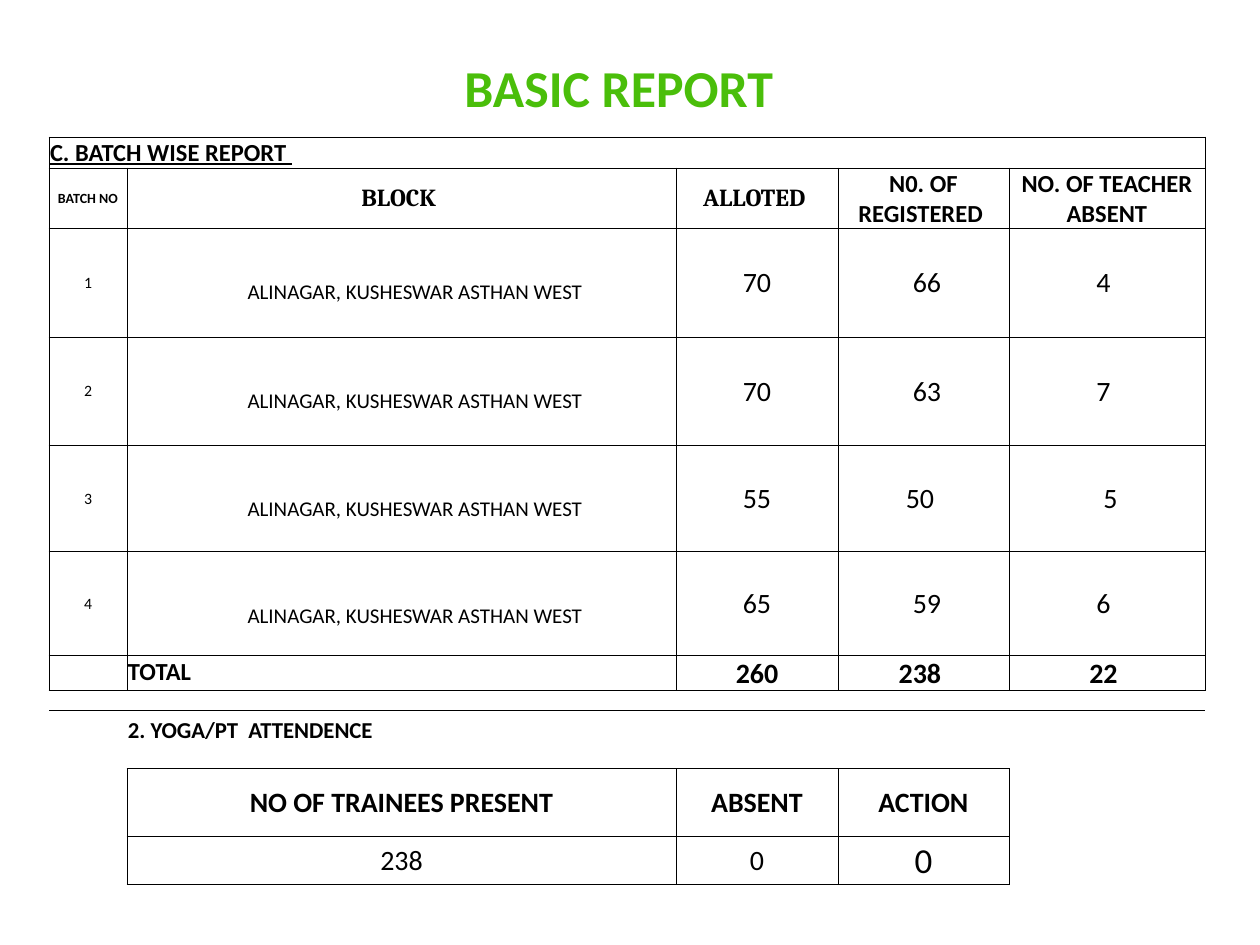
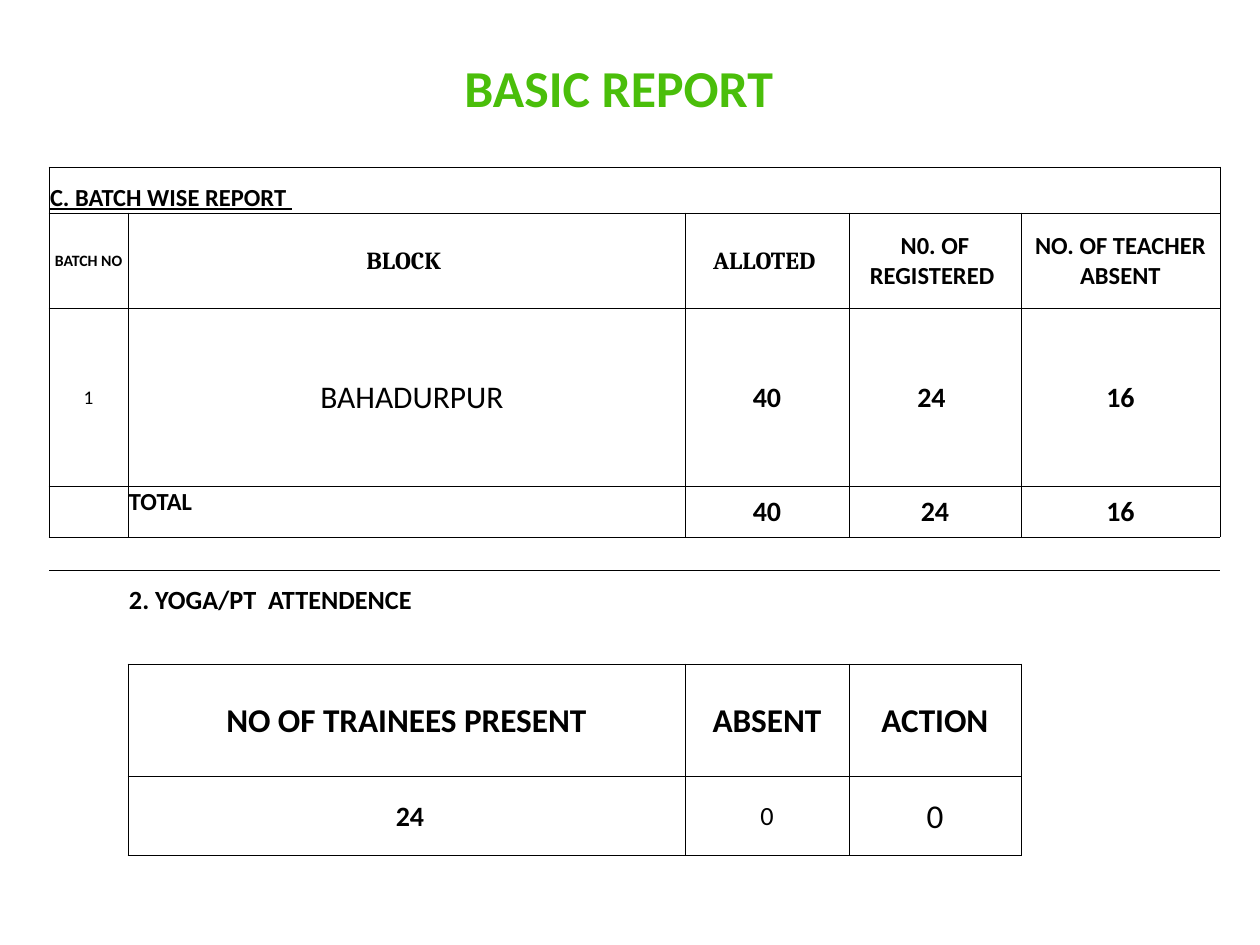
"""Build the two BASIC REPORT slides, each with a batch and attendance table."""
from dataclasses import dataclass
from typing import Optional

from lxml import etree
from pptx import Presentation
from pptx import util as u
from pptx.dml.color import RGBColor
from pptx.enum import text
from pptx.oxml.ns import qn

EMU_PER_PX = 914400 / 126
BLACK, WHITE, GREEN = "000000", "FFFFFF", "4ABE0A"
NO_STYLE = "{2D5ABB26-0587-4C30-8999-92F81FD0307C}"
LEFT = 49
SIDES = {"L": (0, -1), "R": (0, 1), "T": (-1, 0), "B": (1, 0)}
CENTER, START = text.PP_ALIGN.CENTER, text.PP_ALIGN.LEFT
TOP, MIDDLE, BOTTOM = (text.MSO_ANCHOR.TOP, text.MSO_ANCHOR.MIDDLE,
                       text.MSO_ANCHOR.BOTTOM)


@dataclass
class Cell:
    text: str
    size: int
    bold: bool = False
    font: str = "Calibri"
    underline: bool = False
    align: text.PP_ALIGN = CENTER
    anchor: text.MSO_ANCHOR = MIDDLE
    shift: int = 0
    drop: int = 0


Row = list[Optional[Cell]]


@dataclass
class Report:
    top: int
    cols: list[int]
    rows: list[int]
    batch_size: int
    batches: list[Row]
    totals: Row
    yoga_size: int
    present_size: int
    present: Row

    def grid(self) -> list[Row]:
        blank: Row = [None] * 5
        title = Cell("C. BATCH WISE REPORT ", 14, True, underline=True,
                     align=START, anchor=BOTTOM)
        heads = [Cell("BATCH NO", self.batch_size, True),
                 Cell("BLOCK ", 14, True, "Cambria"),
                 Cell("ALLOTED ", 14, True, "Cambria"),
                 Cell("N0. OF REGISTERED ", 14, True),
                 Cell("NO. OF TEACHER ABSENT", 14, True)]
        total = Cell("TOTAL", 14, True, align=START, anchor=TOP)
        yoga = Cell("2. YOGA/PT  ATTENDENCE", self.yoga_size, True, align=START)
        present_heads = [Cell(name, self.present_size, True)
                         for name in ("NO OF TRAINEES PRESENT", "ABSENT", "ACTION")]
        return [[title, *blank[1:]], heads, *self.batches,
                [None, total, *self.totals], blank,
                [None, yoga, None, None, None], blank,
                [None, *present_heads, None], [None, *self.present, None]]


def px(n: float) -> u.Emu:
    return u.Emu(round(n * EMU_PER_PX))


def rgb(value: str) -> RGBColor:
    return RGBColor.from_string(value)


def figures(values: str, bold: bool, shifts: tuple[int, ...]) -> Row:
    return [Cell(v, 16, bold, shift=s) for v, s in zip(values.split(), shifts)]


def joint_batch(number: int, values: str, shifts: tuple[int, ...]) -> Row:
    place = Cell("ALINAGAR, KUSHESWAR ASTHAN WEST", 12, anchor=TOP,
                 shift=27, drop=51)
    return [Cell(str(number), 9), place, *figures(values, False, shifts)]


def write(p, words: str, **fmt) -> None:
    color = fmt.pop("color", BLACK)
    r = p.add_run()
    r.text = words
    for name, value in fmt.items():
        setattr(r.font, name, value)
    r.font.color.rgb = rgb(color)


def add_border(cell, side: str) -> None:
    ln = etree.SubElement(cell._tc.get_or_add_tcPr(), qn(f"a:ln{side}"), w="6350")
    fill = etree.SubElement(ln, qn("a:solidFill"))
    etree.SubElement(fill, qn("a:srgbClr"), val=BLACK)


def fill_cell(cell, item: Optional[Cell]) -> None:
    p = cell.text_frame.paragraphs[0]
    margins = {"margin_left": 1, "margin_right": 1, "margin_top": 1, "margin_bottom": 0}
    if item:
        margins["margin_left"] += max(item.shift, 0)
        margins["margin_right"] += max(-item.shift, 0)
        margins["margin_top"] += item.drop
        cell.vertical_anchor = item.anchor
        cell.fill.solid()
        cell.fill.fore_color.rgb = rgb(WHITE)
        p.alignment = item.align
        write(p, item.text, name=item.font, size=u.Pt(item.size),
              bold=item.bold, underline=item.underline)
    else:
        cell.fill.background()
        etree.SubElement(p._p, qn("a:endParaRPr"), sz="600")
    for name, value in margins.items():
        setattr(cell, name, px(value))


def add_title(s) -> None:
    tf = s.shapes.add_textbox(px(178), px(49), px(882), px(69)).text_frame
    tf.word_wrap = True
    p = tf.paragraphs[0]
    p.alignment = CENTER
    write(p, "BASIC REPORT", name="Calibri", size=u.Pt(29.6), bold=True, color=GREEN)


def add_report(s, report: Report) -> None:
    grid = report.grid()
    last = len(grid) - 1
    sp = s.shapes.add_table(len(grid), 5, px(LEFT), px(report.top),
                            px(sum(report.cols)), px(sum(report.rows)))
    table = sp.table
    table.first_row = table.horz_banding = False
    table._tbl.tblPr.find(qn("a:tableStyleId")).text = NO_STYLE
    for col, width in zip(table.columns, report.cols):
        col.width = px(width)
    for row, height in zip(table.rows, report.rows):
        row.height = px(height)

    def boxed(r: int, c: int) -> bool:
        in_batches = 0 <= r <= last - 5 and 0 <= c <= 4
        in_attendance = last - 1 <= r <= last and 1 <= c <= 3
        return in_batches or in_attendance

    table.cell(0, 0).merge(table.cell(0, 4))
    table.cell(last - 3, 1).merge(table.cell(last - 3, 3))
    for r, items in enumerate(grid):
        for c, item in enumerate(items):
            cell = table.cell(r, c)
            for side, (dr, dc) in SIDES.items():
                if boxed(r, c) or boxed(r + dr, c + dc):
                    add_border(cell, side)
            fill_cell(cell, item)


REPORTS = [
    Report(top=137, cols=[78, 549, 162, 171, 196],
           rows=[31, 60, 109, 108, 107, 104, 35, 20, 38, 20, 68, 48],
           batch_size=8,
           batches=[joint_batch(1, "70 66 4", (0, 7, -7)),
                    joint_batch(2, "70 63 7", (0, 7, -7)),
                    joint_batch(3, "55 50 5", (0, -7, 7)),
                    joint_batch(4, "65 59 6", (0, 7, -7))],
           totals=figures("260 238 22", True, (0, -7, -7)),
           yoga_size=13, present_size=16,
           present=[Cell("238", 16), Cell("0", 16), Cell("0", 20)]),
    Report(top=167, cols=[79, 557, 164, 172, 199],
           rows=[46, 95, 178, 51, 33, 61, 33, 113, 79],
           batch_size=9,
           batches=[[Cell("1", 11), Cell("BAHADURPUR", 18, shift=11),
                     *figures("40 24 16", True, (0, -7, 0))]],
           totals=figures("40 24 16", True, (0, 0, 0)),
           yoga_size=15, present_size=19,
           present=[Cell("24", 16, True, shift=7), Cell("0", 15), Cell("0", 19)]),
]


def main() -> None:
    prs = Presentation()
    prs.slide_width, prs.slide_height = px(1260), px(945)
    for report in REPORTS:
        s = prs.slides.add_slide(prs.slide_layouts[6])
        add_title(s)
        add_report(s, report)
    prs.save("out.pptx")


if __name__ == "__main__":
    main()
